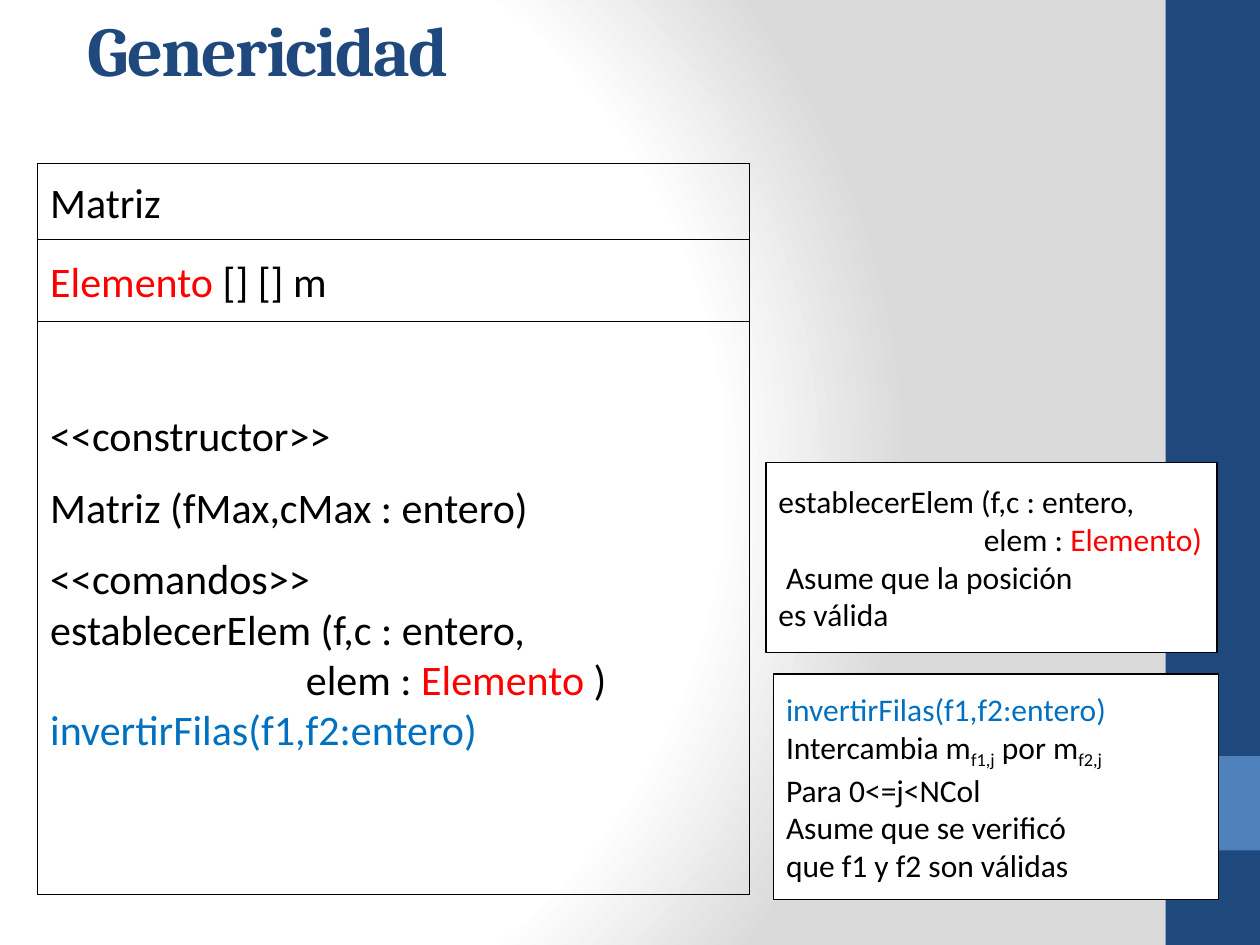
from lxml.etree import SubElement
from pptx import Presentation
from pptx.dml.color import RGBColor
from pptx.enum.shapes import MSO_SHAPE
from pptx.enum.text import MSO_ANCHOR
from pptx.oxml.ns import qn
from pptx.util import Inches, Pt

COLORS = {"navy": "1F497D", "sky": "4F81BD", "black": "000000", "red": "FF0000",
          "blue": "0070C0", "white": "FFFFFF", "grey": "DADADA"}


def color(name):
    return RGBColor.from_string(COLORS[name])


def add_back(slide):
    slide.background.fill.gradient()
    grad = slide.element.find(".//" + qn("a:gradFill"))
    for child in list(grad):
        grad.remove(child)
    stops = SubElement(grad, qn("a:gsLst"))
    for pos, name in ((0, "white"), (75, "white"), (100, "grey")):
        stop = SubElement(stops, qn("a:gs"), pos=str(pos * 1000))
        SubElement(stop, qn("a:srgbClr"), val=COLORS[name])
    path = SubElement(grad, qn("a:path"), path="circle")
    SubElement(path, qn("a:fillToRect"), l="20000", t="50000", r="100000", b="50000")


def add_rect(slide, place, fill=None, line=None):
    rect = slide.shapes.add_shape(MSO_SHAPE.RECTANGLE, *map(Inches, place))
    rect.shadow.inherit = False
    if fill:
        rect.fill.solid()
        rect.fill.fore_color.rgb = color(fill)
    else:
        rect.fill.background()
    if line:
        rect.line.color.rgb = color(line)
        rect.line.width = Pt(0.75)
    else:
        rect.line.fill.background()
    return rect


def add_run(para, text, size, name="black", font="Calibri", **attrs):
    run = para.add_run()
    run.text = text
    run.font.size = Pt(size)
    run.font.name = font
    run.font.color.rgb = color(name)
    for key, value in attrs.items():
        run.font._element.set(key, str(value))


def add_box(slide, place, size, lines, fill=None, foot=0.05):
    frame = add_rect(slide, place, fill, "black").text_frame
    frame.word_wrap = True
    frame.vertical_anchor = MSO_ANCHOR.MIDDLE
    frame.margin_right = Inches(0.05)
    frame.margin_bottom = Inches(foot)
    for index, (runs, indent, before) in enumerate(lines):
        para = frame.paragraphs[0] if index == 0 else frame.add_paragraph()
        para.alignment = 1
        para.space_before = Pt(before)
        para._p.get_or_add_pPr().set("marL", str(Inches(indent)))
        for text, name, base in runs:
            add_run(para, text, size, name, baseline=base * 1000)


def line(*runs, indent=0, before=0):
    full = [(run, "black", 0) if isinstance(run, str) else (*run, 0)[:3] for run in runs]
    return full, indent, before


def add_title(slide, text):
    frame = slide.shapes.add_textbox(Inches(0.6), 0, Inches(8.33), Inches(1.25)).text_frame
    frame.word_wrap = True
    add_run(frame.paragraphs[0], text, 40, "navy", "Cambria", b=1, spc=-100)


def main():
    deck = Presentation()
    deck.slide_width, deck.slide_height = Inches(10), Inches(7.5)
    slide = deck.slides.add_slide(deck.slide_layouts[6])
    add_back(slide)
    add_rect(slide, (9.25, 0, 0.75, 7.5), "navy")
    add_rect(slide, (9.25, 6, 0.75, 0.75), "sky")

    swap = line(("invertirFilas(f1,f2:entero)", "blue"))
    store = line("establecerElem (f,c : entero,")
    add_box(slide, (0.3, 1.3, 5.65, 0.6), 24, [line("Matriz")])
    add_box(slide, (0.3, 1.9, 5.65, 0.65), 24, [line(("Elemento", "red"), " [] [] m")])
    add_box(slide, (0.3, 2.55, 5.65, 4.55), 24, [
        line("<<constructor>>"),
        line("Matriz (fMax,cMax : entero)", before=12),
        line("<<comandos>>", before=12),
        store,
        line("elem : ", ("Elemento", "red"), " )", indent=2.03),
        swap,
    ], foot=0.46)
    add_box(slide, (6.08, 3.67, 3.58, 1.51), 18, [
        store,
        line("elem : ", ("Elemento)", "red"), indent=1.63),
        line("Asume que la posición", indent=0.06),
        line("es válida"),
    ], "white")
    add_box(slide, (6.14, 5.35, 3.53, 1.79), 18, [
        swap,
        line("Intercambia m", ("f1,j", "black", -25), " por m", ("f2,j", "black", -25)),
        line("Para 0<=j<NCol"),
        line("Asume que se verificó"),
        line("que f1 y f2 son válidas"),
    ], "white")
    add_title(slide, "Genericidad")
    deck.save("out.pptx")


if __name__ == "__main__":
    main()
